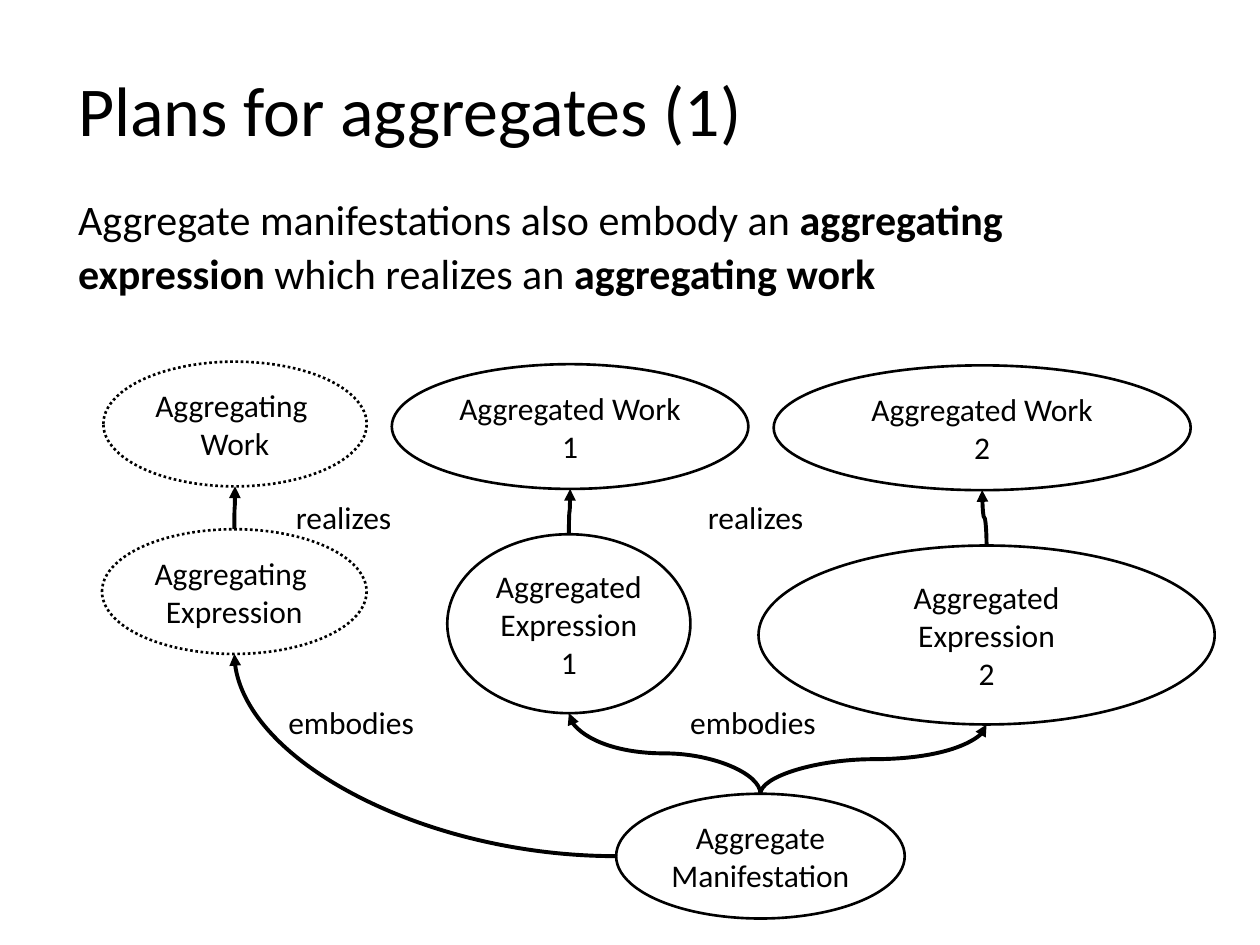
"""Build a slide on aggregating works, expressions and manifestations."""
from lxml import etree
from pptx import Presentation
from pptx.dml.color import RGBColor
from pptx.enum.dml import MSO_LINE
from pptx.enum.shapes import MSO_CONNECTOR, MSO_SHAPE
from pptx.enum.text import MSO_ANCHOR, MSO_AUTO_SIZE, PP_ALIGN
from pptx.oxml.ns import qn
from pptx.util import Inches, Pt

OVAL = MSO_SHAPE.OVAL
CURVE = MSO_CONNECTOR.CURVE
DOTS = MSO_LINE.ROUND_DOT
LEFT, CENTER = PP_ALIGN.LEFT, PP_ALIGN.CENTER
TOP, MIDDLE = MSO_ANCHOR.TOP, MSO_ANCHOR.MIDDLE
FIXED = MSO_AUTO_SIZE.NONE
BLACK = RGBColor(0, 0, 0)
FONT = "Calibri"

TITLE = "Plans for aggregates (1)"
BODY = [
    ("Aggregate manifestations also embody an ", False),
    ("aggregating expression ", True),
    ("which realizes an ", False),
    ("aggregating work", True),
]
NODES = {
    "manif": ("Aggregate\nManifestation", 4.89, 6.3, 2.29, 0.99, False),
    "expr1": ("Aggregated\nExpression\n1", 3.55, 4.24, 1.93, 1.42, False),
    "work1": ("Aggregated Work\n1", 3.11, 2.89, 2.83, 0.99, False),
    "expr2": ("Aggregated\nExpression\n2", 6.02, 4.33, 3.62, 1.42, False),
    "work2": ("Aggregated Work\n2", 6.14, 2.9, 3.31, 0.99, False),
    "expr0": ("Aggregating \nExpression", 0.81, 4.2, 2.1, 0.99, True),
    "work0": ("Aggregating \nWork", 0.82, 2.87, 2.09, 0.99, True),
}
LINKS = [
    ("expr0", "work0"), ("expr1", "work1"), ("expr2", "work2"),
    ("manif", "expr2"), ("manif", "expr1"),
]
LABELS = [
    ("realizes", 2.25, 3.9, 1.03), ("realizes", 5.52, 3.9, 1.03),
    ("embodies", 2.19, 5.53, 1.3), ("embodies", 5.38, 5.53, 1.3),
]


def place(shape, *box):
    shape.left, shape.top, shape.width, shape.height = map(Inches, box)


def style(frame, size, align=LEFT, anchor=TOP, wrap=False):
    frame.auto_size = FIXED
    frame.word_wrap = wrap
    frame.vertical_anchor = anchor
    for para in frame.paragraphs:
        para.alignment = align
        for run in para.runs:
            run.font.name = FONT
            run.font.size = Pt(size)
            run.font.color.rgb = BLACK


def add_node(slide, text, x, y, w, h, dotted):
    node = slide.shapes.add_shape(OVAL, *map(Inches, (x, y, w, h)))
    node.shadow.inherit = False
    node.fill.background()
    node.line.color.rgb = BLACK
    node.line.width = Pt(1.5)
    if dotted:
        node.line.dash_style = DOTS
    node.text_frame.text = text
    style(node.text_frame, 18, CENTER, MIDDLE)


def add_arrow(slide, start, end, turn, kind="curvedConnector3"):
    (x1, y1), (x2, y2) = start, end
    wide, high = abs(x2 - x1), abs(y2 - y1)
    flip = turn == 270 and x2 < x1
    if turn == 270:
        wide, high = high, wide
    x, y = (x1 + x2 - wide) / 2, (y1 + y2 - high) / 2
    ends = (y + high, y) if flip else (y, y + high)
    line = slide.shapes.add_connector(
        CURVE, *map(Inches, (x, ends[0], x + wide, ends[1])))
    line.line.color.rgb = BLACK
    line.line.width = Pt(2.25)
    props = line._element.spPr
    props.find(qn("a:xfrm")).set("rot", str(turn * 60000))
    props.find(qn("a:prstGeom")).set("prst", kind)
    etree.SubElement(props.find(qn("a:ln")), qn("a:tailEnd"), type="triangle")
    etree.SubElement(props, qn("a:effectLst"))


def top_of(name):
    _, x, y, w, _, _ = NODES[name]
    return x + w / 2, y


def foot_of(name):
    _, x, y, w, h, _ = NODES[name]
    return x + w / 2, y + h


def main():
    deck = Presentation()
    deck.slide_width, deck.slide_height = Inches(10), Inches(7.5)
    slide = deck.slides.add_slide(deck.slide_layouts[1])

    title, body = slide.placeholders
    place(title, 0.52, 0.48, 5.56, 0.77)
    title.text_frame.text = TITLE
    style(title.text_frame, 40)

    place(body, 0.52, 1.46, 8.41, 0.97)
    para = body.text_frame.paragraphs[0]
    props = para._p.get_or_add_pPr()
    props.set("marL", "0")
    props.set("indent", "0")
    etree.SubElement(props, qn("a:buNone"))
    para.line_spacing = 1.07
    para.space_before, para.space_after = Pt(0), Pt(8)
    for text, bold in BODY:
        run = para.add_run()
        run.text = text
        run.font.bold = bold
    style(body.text_frame, 24, wrap=True)

    for node in NODES.values():
        add_node(slide, *node)
    for start, end in LINKS:
        add_arrow(slide, top_of(start), foot_of(end), 270)
    _, x, y, _, h, _ = NODES["manif"]
    add_arrow(slide, (x, y + h / 2), foot_of("expr0"), 180, "curvedConnector2")
    for text, x, y, w in LABELS:
        label = slide.shapes.add_textbox(*map(Inches, (x, y, w, 0.4)))
        label.text_frame.text = text
        style(label.text_frame, 18, wrap=True)

    deck.save("out.pptx")


if __name__ == "__main__":
    main()
